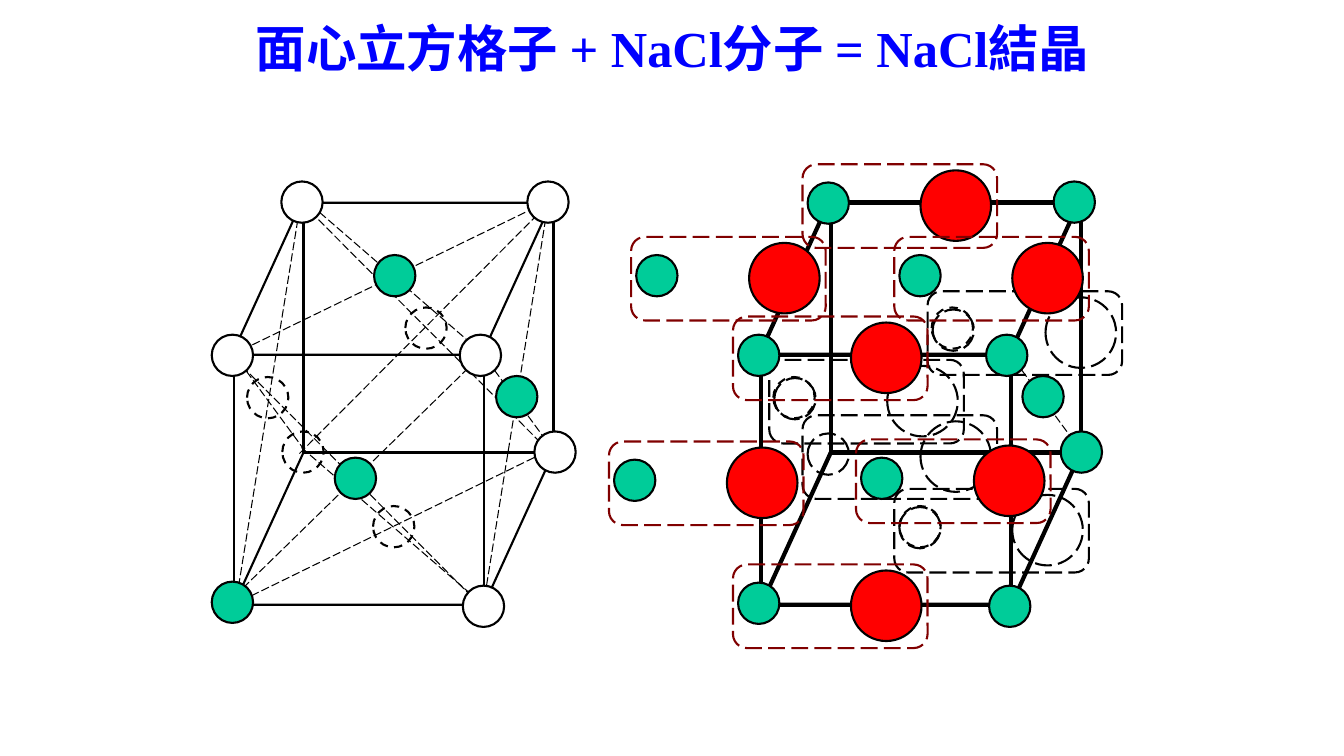
from lxml.etree import SubElement
from pptx import Presentation
from pptx.dml.color import RGBColor
from pptx.enum.dml import MSO_LINE_DASH_STYLE as DASH
from pptx.enum.shapes import MSO_CONNECTOR as CONN, MSO_SHAPE as SHAPE
from pptx.enum.text import MSO_ANCHOR as ANCHOR, PP_ALIGN as ALIGN
from pptx.oxml.ns import qn
from pptx.util import Inches, Pt

BLACK, WHITE, BLUE = "000000", "FFFFFF", "0000FF"
GREEN, RED, MAROON = "00CC99", "FF0000", "800000"


def rgb(value):
    return RGBColor.from_string(value)


class LatticeSlide:
    font = "Times New Roman"
    ion, large_ion = 0.41, 0.7
    pair_width, pair_height = 1.93, 0.83
    edge, skew, depth = 2.48, 0.69, 1.51

    def __init__(self, prs):
        self.slide = prs.slides.add_slide(prs.slide_layouts[5])
        self.shapes = self.slide.shapes

    def title(self, text):
        sp = self.shapes.title
        sp.left, sp.top = Inches(1.67), Inches(0)
        sp.width, sp.height = Inches(10), Inches(0.94)
        tf = sp.text_frame
        tf.word_wrap = True
        tf.vertical_anchor = ANCHOR.MIDDLE
        p = tf.paragraphs[0]
        p.alignment = ALIGN.CENTER
        r = p.add_run()
        r.text = text
        r.font.name, r.font.size, r.font.bold = self.font, Pt(36), True
        r.font.color.rgb = rgb(BLUE)

    def style(self, sp, fill=None, line=BLACK, width=1.5, dash=None):
        sp.shadow.inherit = False
        if fill:
            sp.fill.solid()
            sp.fill.fore_color.rgb = rgb(fill)
        else:
            sp.fill.background()
        self.stroke(sp, line, width, dash)

    def stroke(self, sp, color, width, dash=None):
        sp.line.color.rgb = rgb(color)
        sp.line.width = Pt(width)
        if dash:
            sp.line.dash_style = dash

    def shape(self, kind, x, y, w, h, **look):
        sp = self.shapes.add_shape(kind, Inches(x), Inches(y), Inches(w), Inches(h))
        self.style(sp, **look)

    def atom(self, x, y, fill=None, size=ion, dash=None):
        self.shape(SHAPE.OVAL, x, y, size, size, fill=fill, dash=dash)

    def hidden_atom(self, x, y):
        self.atom(x, y, dash=DASH.DASH)

    def guide(self, x1, y1, x2, y2):
        c = self.shapes.add_connector(
            CONN.STRAIGHT, Inches(x1), Inches(y1), Inches(x2), Inches(y2))
        self.stroke(c, BLACK, 0.75, DASH.LONG_DASH)
        SubElement(c._element.spPr, qn("a:effectLst"))

    def face(self, x, y, width):
        back, front = x + self.skew, y + self.depth
        points = [(x, front), (back, y), (back + self.edge, y), (x + self.edge, front)]
        corners = [(Inches(px), Inches(py)) for px, py in points]
        builder = self.shapes.build_freeform(*corners[0])
        builder.add_line_segments(corners[1:], close=True)
        self.style(builder.convert_to_shape(), width=width)

    def cube(self, x, width):
        top = 2.01
        self.face(x - 0.02, top, width)
        self.face(x, top + self.edge, width)
        for left, y in ((x, top + self.depth), (x + self.skew, top)):
            self.shape(SHAPE.RECTANGLE, left, y, self.edge, self.edge, width=width)

    def molecule(self, x, y, visible=True):
        dash = None if visible else DASH.LONG_DASH
        self.atom(x + 0.05, y + 0.18, GREEN if visible else None, dash=dash)
        self.atom(x + 1.17, y + 0.06, RED if visible else None, self.large_ion, dash)
        self.shape(SHAPE.ROUNDED_RECTANGLE, x, y, self.pair_width, self.pair_height,
                   line=MAROON if visible else BLACK, dash=DASH.LONG_DASH)


BACK_MOLECULES = [(8.87, 4.85), (9.2, 2.89), (7.63, 3.57), (7.96, 4.12)]
FRONT_MOLECULES = [(7.27, 5.6), (8.49, 4.36), (6.04, 4.38), (7.27, 3.14),
                   (7.96, 1.63), (8.87, 2.35), (6.26, 2.35)]
DIAGONALS = [(2.29, 6.01, 5.46, 4.46), (2.99, 4.44, 4.77, 5.98),
             (2.3, 3.52, 5.47, 1.98), (3, 1.96, 4.78, 3.5),
             (2.32, 3.55, 4.75, 5.99), (2.25, 5.99, 4.82, 3.48),
             (3, 2.02, 5.43, 4.46), (2.97, 4.5, 5.47, 1.99),
             (4.79, 6.03, 5.43, 2.06), (4.77, 3.49, 5.49, 4.47),
             (2.33, 6.04, 2.97, 2.08), (2.31, 3.5, 3.03, 4.48)]
HIDDEN_CENTRES = [(3.7, 5.02), (4.02, 3.05), (2.45, 3.74)]
RIGHT_CENTRE = (4.92, 3.73)
FACE_CENTRES = [(3.71, 2.53), (3.32, 4.54), RIGHT_CENTRE]
ORIGIN = (2.1, 5.77)
LEFT_CORNERS = [(2.1, 3.32), (2.79, 1.8)]
RIGHT_CORNERS = [(4.59, 5.81), (4.56, 3.32), (5.23, 1.8), (5.3, 4.28)]
CUBE_LEFT, SHIFT = 2.32, 5.22


def draw_lattice(s):
    s.cube(CUBE_LEFT, 1.5)
    for ends in DIAGONALS:
        s.guide(*ends)
    for x, y in HIDDEN_CENTRES:
        s.hidden_atom(x, y)
    for x, y in FACE_CENTRES + [ORIGIN]:
        s.atom(x, y, GREEN)
    for x, y in LEFT_CORNERS + RIGHT_CORNERS:
        s.atom(x, y, WHITE)
    s.hidden_atom(2.8, 4.28)


def draw_crystal(s):
    s.cube(CUBE_LEFT + SHIFT + 0.01, 3)
    for x, y in HIDDEN_CENTRES:
        s.hidden_atom(x + SHIFT, y)
    s.guide(10, 3.49, 10.72, 4.47)
    for x, y in [RIGHT_CENTRE, *RIGHT_CORNERS]:
        s.atom(x + SHIFT, y, GREEN)
    for x, y in FRONT_MOLECULES:
        s.molecule(x, y)


def main():
    prs = Presentation()
    prs.slide_width, prs.slide_height = Inches(13.33), Inches(7.5)
    s = LatticeSlide(prs)
    s.title("面心立方格子 + NaCl分子 = NaCl結晶")
    for x, y in BACK_MOLECULES:
        s.molecule(x, y, visible=False)
    draw_lattice(s)
    draw_crystal(s)
    prs.save("out.pptx")


if __name__ == "__main__":
    main()
